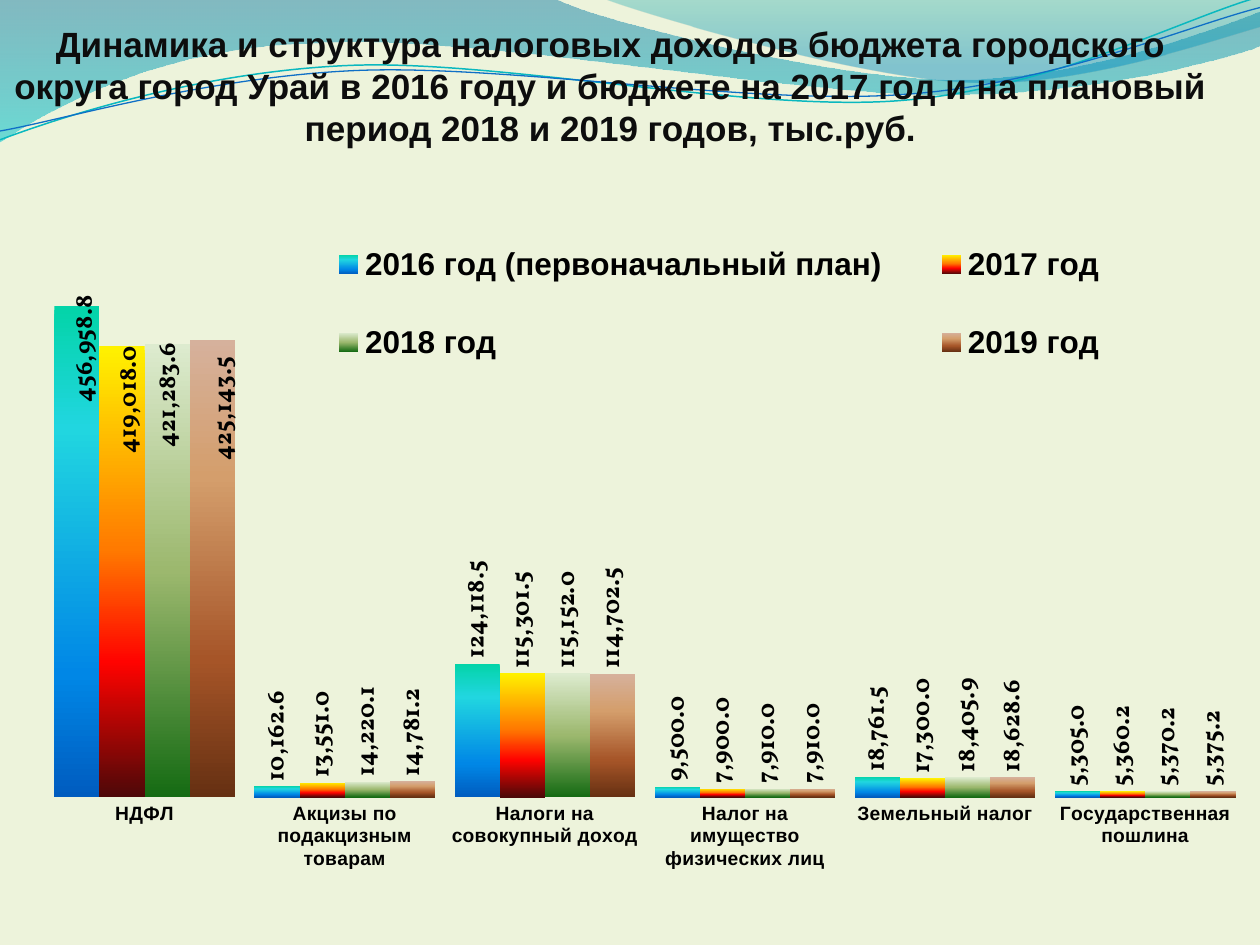
"""Builds a slide with a column chart of city tax revenue under a wave header."""
from copy import deepcopy

from lxml.etree import SubElement
from pptx import Presentation
from pptx.chart.data import CategoryChartData
from pptx.dml.color import RGBColor
from pptx.enum.chart import XL_CHART_TYPE, XL_LABEL_POSITION, XL_LEGEND_POSITION, XL_TICK_MARK
from pptx.enum.text import MSO_AUTO_SIZE, PP_ALIGN
from pptx.oxml.ns import qn
from pptx.util import Inches, Pt


def set_gradient(fill, element, stops):
    fill.gradient()
    fill.gradient_angle = 270
    stop_list = next(element.iter(qn("a:gsLst")))
    for old_stop in list(stop_list):
        stop_list.remove(old_stop)
    for position, color, *opacity in stops:
        stop = SubElement(stop_list, qn("a:gs"), pos=str(position * 1000))
        color_element = SubElement(stop, qn("a:srgbClr"), val=color)
        for percent in opacity:
            SubElement(color_element, qn("a:alpha"), val=str(percent * 1000))


def set_layout(layout, **values):
    for tag, value in values.items():
        SubElement(layout, qn(f"c:{tag}"), val=str(value))


presentation = Presentation()
presentation.slide_width = Inches(10)
presentation.slide_height = Inches(7.5)
width, height = presentation.slide_width, presentation.slide_height
slide = presentation.slides.add_slide(presentation.slide_layouts[6])
slide.background.fill.solid()
slide.background.fill.fore_color.rgb = RGBColor.from_string("EDF3DB")

waves = [
    ([(0, 0), (4.4, -0.01), (4.76, 0.17, 6.64, 0.63, 7.58, 0.63), (8.53, 0.63, 9.58, 0.26, 10, 0.09),
      (10.01, 0.36), (9.83, 0.44, 8.7, 0.76, 7.46, 0.75), (6.22, 0.75, 3.82, 0.28, 2.57, 0.34),
      (1.29, 0.36, 0.46, 0.83, -0.01, 1.13)], [(0, "0074A1", 45), (100, "00C6CF", 55)], None),
    ([(4.79, -0.01), (5.09, 0.11, 6.82, 0.62, 7.69, 0.65), (8.56, 0.69, 9.61, 0.32, 10, 0.21),
      (10, 0)], [(0, "00A1A9", 30), (80, "008BBF", 45)], None),
    ([(0, 1.11), (0.48, 0.93, 1.58, 0.57, 2.77, 0.52), (3.95, 0.47, 5.93, 0.89, 7.13, 0.8),
      (8.33, 0.71, 9.38, 0.15, 9.98, -0.02)], None, ("0AB8BF", 0.85)),
    ([(0, 1.04), (0.47, 0.96, 1.64, 0.61, 2.83, 0.56), (4.03, 0.51, 5.97, 0.84, 7.17, 0.75),
      (8.36, 0.67, 9.41, 0.21, 10, 0.06)], None, ("0F6FC6", 0.75)),
]
units = 1000
for steps, stops, outline in waves:
    steps = [[round(value * units) for value in step] for step in steps]
    ends = [step[-2:] for step in steps]
    left, top = (min(values) for values in zip(*ends))
    builder = slide.shapes.build_freeform(*ends[0], scale=width / 10 / units)
    builder.add_line_segments(ends[1:], close=stops is not None)
    wave = builder.convert_to_shape()
    wave.shadow.inherit = False
    for segment, step in zip(list(wave.element.iter(qn("a:lnTo"))), steps[1:]):
        if len(step) == 6:
            curve = segment.makeelement(qn("a:cubicBezTo"))
            for x, y in zip(step[::2], step[1::2]):
                SubElement(curve, qn("a:pt"), x=str(x - left), y=str(y - top))
            segment.getparent().replace(segment, curve)
    if stops:
        set_gradient(wave.fill, wave.element, stops)
        wave.line.fill.background()
    else:
        wave.fill.background()
        wave.line.color.rgb = RGBColor.from_string(outline[0])
        wave.line.width = Pt(outline[1])

series_rows = [
    ("2016 год (первоначальный план)", (456958.8, 10162.6, 124118.5, 9500, 18761.5, 5305),
     [(0, "03D4A8"), (25, "21D6E0"), (75, "0087E6"), (100, "005CBF")], (0.007, 0.136)),
    ("2017 год ", (419018, 13551, 115301.5, 7900, 17300, 5360.2),
     [(0, "FFF200"), (45, "FF7A00"), (70, "FF0300"), (100, "4D0808")], (0.006, 0.149)),
    ("2018 год ", (421283.6, 14220.1, 115152, 7910, 18405.9, 5370.2),
     [(0, "DDEBCF"), (50, "9CB86E"), (100, "156B13")], (0.001, 0.145)),
    ("2019 год ", (425143.5, 14781.2, 114702.5, 7910, 18628.6, 5375.2),
     [(0, "D6B19C"), (30, "D49E6C"), (70, "A65528"), (100, "663012")], (0.01, 0.167)),
]
chart_data = CategoryChartData(number_format="#,##0.0")
chart_data.categories = ["НДФЛ", "Акцизы по подакцизным товарам", "Налоги на совокупный доход",
                         "Налог на имущество физических лиц", "Земельный налог",
                         "Государственная пошлина"]
for name, values, stops, offset in series_rows:
    chart_data.add_series(name, values)
chart = slide.shapes.add_chart(
    XL_CHART_TYPE.COLUMN_CLUSTERED, int(width * 0.0354), int(height * 0.175),
    int(width * 0.953), int(height * 0.796), chart_data).chart
chart.has_title = False
chart.font.size = Pt(10)
chart.font.name = "Vollkorn"
plot = chart.plots[0]
plot.gap_width = 43
plot.overlap = 0
plot.vary_by_categories = False
plot_area = next(chart.element.iter(qn("c:plotArea")))
for old_layout in plot_area.findall(qn("c:layout")):
    plot_area.remove(old_layout)
plot_layout = plot_area.makeelement(qn("c:layout"))
plot_area.insert(0, plot_layout)
set_layout(SubElement(plot_layout, qn("c:manualLayout")), layoutTarget="inner", xMode="edge",
           yMode="edge", x=0, y=0.125, w=1, h=0.715)

value_axis = chart.value_axis
value_axis.visible = False
value_axis.has_major_gridlines = False
value_axis.minimum_scale = 0
value_axis.maximum_scale = 500000
category_axis = chart.category_axis
category_axis.major_tick_mark = XL_TICK_MARK.NONE
category_axis.format.line.fill.background()

chart.has_legend = True
legend = chart.legend
legend.position = XL_LEGEND_POSITION.TOP
legend.include_in_layout = False
legend_element = next(chart.element.iter(qn("c:legend")))
for old_layout in legend_element.findall(qn("c:layout")):
    legend_element.remove(old_layout)
legend_layout = legend_element.makeelement(qn("c:layout"))
legend_element.find(qn("c:legendPos")).addnext(legend_layout)
set_layout(SubElement(legend_layout, qn("c:manualLayout")), xMode="edge", yMode="edge",
           x=0.204, y=0.052, w=0.723, h=0.263)

fonts = [(category_axis.tick_labels.font, 11, "Arial"), (legend.font, 18, "Arial")]
for series, (name, values, stops, offset) in zip(plot.series, series_rows):
    set_gradient(series.format.fill, series._element, stops)
    series.invert_if_negative = False
    labels = series.data_labels
    labels.show_value = True
    labels.number_format = "#,##0.0"
    labels.number_format_is_linked = False
    labels.position = XL_LABEL_POSITION.OUTSIDE_END
    fonts.append((labels.font, 14, "Vollkorn"))
for font, size, typeface in fonts:
    font.size = Pt(size)
    font.name = typeface
    font.bold = True
    font.color.rgb = RGBColor.from_string("000000")

for series, (name, values, stops, (shift_x, shift_y)) in zip(plot.series, series_rows):
    labels_element = series._element.find(qn("c:dLbls"))
    text_body = labels_element.find(qn("c:txPr"))
    body = text_body.find(qn("a:bodyPr"))
    body.set("rot", "-5400000")
    body.set("vert", "horz")
    series.points[0].data_label.position = XL_LABEL_POSITION.OUTSIDE_END
    label = labels_element.find(qn("c:dLbl"))
    label_layout = label.makeelement(qn("c:layout"))
    label.find(qn("c:idx")).addnext(label_layout)
    set_layout(SubElement(label_layout, qn("c:manualLayout")), x=shift_x, y=shift_y)
    label_position = label.find(qn("c:dLblPos"))
    label_position.addprevious(deepcopy(labels_element.find(qn("c:numFmt"))))
    label_position.addprevious(deepcopy(text_body))
    for old_leader in labels_element.findall(qn("c:showLeaderLines")):
        labels_element.remove(old_leader)
    set_layout(labels_element, showLeaderLines=0)

title = slide.shapes.add_textbox(0, int(height * 0.017), int(width * 0.969), int(height * 0.148))
title.text_frame.word_wrap = True
title.text_frame.auto_size = MSO_AUTO_SIZE.SHAPE_TO_FIT_TEXT
title.text_frame.text = ("Динамика и структура налоговых доходов бюджета городского округа город Урай "
                         "в 2016 году и бюджете на 2017 год и на плановый период 2018 и 2019 годов, тыс.руб.")
paragraph = title.text_frame.paragraphs[0]
paragraph.alignment = PP_ALIGN.CENTER
font = paragraph.runs[0].font
font.size = Pt(20)
font.bold = True
font.name = "Arial"
font.color.rgb = RGBColor.from_string("0D0D0D")

presentation.save("out.pptx")
